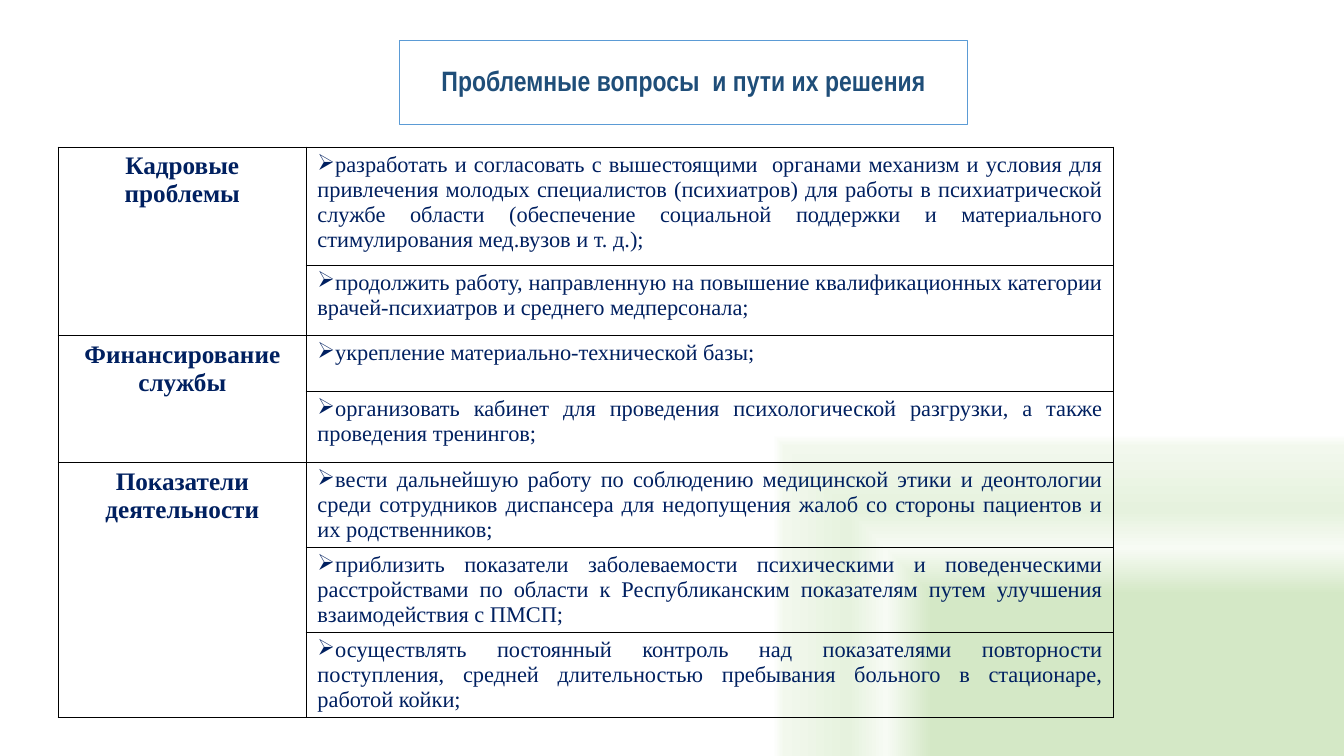
from lxml import etree
from pptx import Presentation
from pptx.dml.color import RGBColor
from pptx.enum.shapes import MSO_SHAPE
from pptx.enum.text import MSO_ANCHOR, PP_ALIGN
from pptx.oxml import parse_xml
from pptx.oxml.ns import nsdecls, qn
from pptx.util import Cm, Pt

# Content
TITLE = "Проблемные вопросы  и пути их решения"
PROBLEMS = [
    ("Кадровые проблемы", [
        "разработать и согласовать с вышестоящими  органами механизм и условия для "
        "привлечения молодых специалистов (психиатров) для работы в психиатрической "
        "службе области (обеспечение социальной поддержки и материального "
        "стимулирования мед.вузов и т. д.);",
        "продолжить работу, направленную на повышение квалификационных категории "
        "врачей-психиатров и среднего медперсонала;",
    ]),
    ("Финансирование службы", [
        "укрепление материально-технической базы;",
        "организовать кабинет для проведения психологической разгрузки, а также "
        "проведения тренингов;",
    ]),
    ("Показатели деятельности", [
        "вести дальнейшую работу по соблюдению медицинской этики и деонтологии "
        "среди сотрудников диспансера для недопущения жалоб со стороны пациентов и "
        "их родственников;",
        "приблизить показатели заболеваемости психическими и поведенческими "
        "расстройствами по области к Республиканским показателям путем улучшения "
        "взаимодействия с ПМСП;",
        "осуществлять постоянный контроль над показателями повторности "
        "поступления, средней длительностью пребывания больного в стационаре, "
        "работой койки;",
    ]),
]

# Layout and style
COLUMN_WIDTHS = [6.25, 20.35]
ROW_HEIGHTS = [2.97, 1.78, 1.4, 1.8, 2.06, 2.06, 2.06]
BACKGROUND_STOPS = [(43, "D4E8C6"), (55, "F7FBF4"), (65, "E6F2DE"),
                    (82, "F2F8ED"), (85, "FFFFFF")]
TITLE_BLUE = RGBColor(0x1F, 0x4E, 0x79)
FRAME_BLUE = RGBColor(0x5B, 0x9B, 0xD5)
NAVY = RGBColor(0x00, 0x20, 0x60)
BLACK = RGBColor(0x00, 0x00, 0x00)
CENTER, JUSTIFY = PP_ALIGN.CENTER, PP_ALIGN.JUSTIFY
MIDDLE = MSO_ANCHOR.MIDDLE
RECTANGLE = MSO_SHAPE.RECTANGLE


def write(frame, text, *, size, color=NAVY, font="Times New Roman", bold=False,
          align=CENTER, bullet=None, spacing=None):
    frame.word_wrap = True
    para = frame.paragraphs[0]
    para.alignment = align
    if spacing:
        para.line_spacing = spacing
    if bullet:
        properties = para._p.get_or_add_pPr()
        properties.set("marL", "0")
        properties.set("indent", "0")
        etree.SubElement(properties, qn("a:buChar")).set("char", bullet)
    span = para.add_run()
    span.text = text
    span.font.name = font
    span.font.size = Pt(size)
    span.font.bold = bold
    span.font.color.rgb = color


def style_cell(cell):
    cell.margin_left = cell.margin_right = Cm(0.28)
    cell.margin_top = cell.margin_bottom = Cm(0.13)
    properties = cell._tc.get_or_add_tcPr()
    for side in ("lnL", "lnR", "lnT", "lnB"):
        properties.append(parse_xml(
            f'<a:{side} {nsdecls("a")} w="{Pt(1)}"><a:solidFill>'
            f'<a:srgbClr val="{BLACK}"/></a:solidFill></a:{side}>'))
    cell.fill.background()


def paint_background(page):
    stops = "".join(f'<a:gs pos="{place * 1000}"><a:srgbClr val="{color}"/></a:gs>'
                    for place, color in BACKGROUND_STOPS)
    page.element.cSld.insert(0, parse_xml(
        f'<p:bg {nsdecls("p", "a")}><p:bgPr><a:gradFill><a:gsLst>{stops}</a:gsLst>'
        '<a:path path="rect"><a:fillToRect l="100000" t="100000"/></a:path>'
        '</a:gradFill><a:effectLst/></p:bgPr></p:bg>'))


def add_title(page):
    box = page.shapes.add_shape(RECTANGLE, Cm(10.06), Cm(1.02), Cm(14.33), Cm(2.11))
    box.shadow.inherit = False
    box.fill.background()
    box.line.color.rgb = FRAME_BLUE
    box.line.width = Pt(0.75)
    box.text_frame.vertical_anchor = MIDDLE
    write(box.text_frame, TITLE, size=20, color=TITLE_BLUE, font="Arial Narrow",
          bold=True, spacing=0.9)


def add_problem_table(page):
    table = page.shapes.add_table(
        len(ROW_HEIGHTS), len(COLUMN_WIDTHS), Cm(1.47), Cm(3.71),
        Cm(sum(COLUMN_WIDTHS)), Cm(sum(ROW_HEIGHTS))).table
    table.first_row = table.horz_banding = False
    for column, width in zip(table.columns, COLUMN_WIDTHS):
        column.width = Cm(width)
    for row, height in zip(table.rows, ROW_HEIGHTS):
        row.height = Cm(height)
    for cell in table.iter_cells():
        style_cell(cell)

    # Each problem spans the rows of its solutions
    first = 0
    for problem, solutions in PROBLEMS:
        heading = table.cell(first, 0)
        heading.merge(table.cell(first + len(solutions) - 1, 0))
        write(heading.text_frame, problem, size=18, bold=True)
        for row, solution in enumerate(solutions, first):
            write(table.cell(row, 1).text_frame, solution, size=16,
                  align=JUSTIFY, bullet="➢")
        first += len(solutions)


def main():
    deck = Presentation()
    deck.slide_width, deck.slide_height = Cm(33.87), Cm(19.05)
    page = deck.slides.add_slide(deck.slide_layouts[6])
    paint_background(page)
    add_title(page)
    add_problem_table(page)
    deck.save("out.pptx")


if __name__ == "__main__":
    main()
